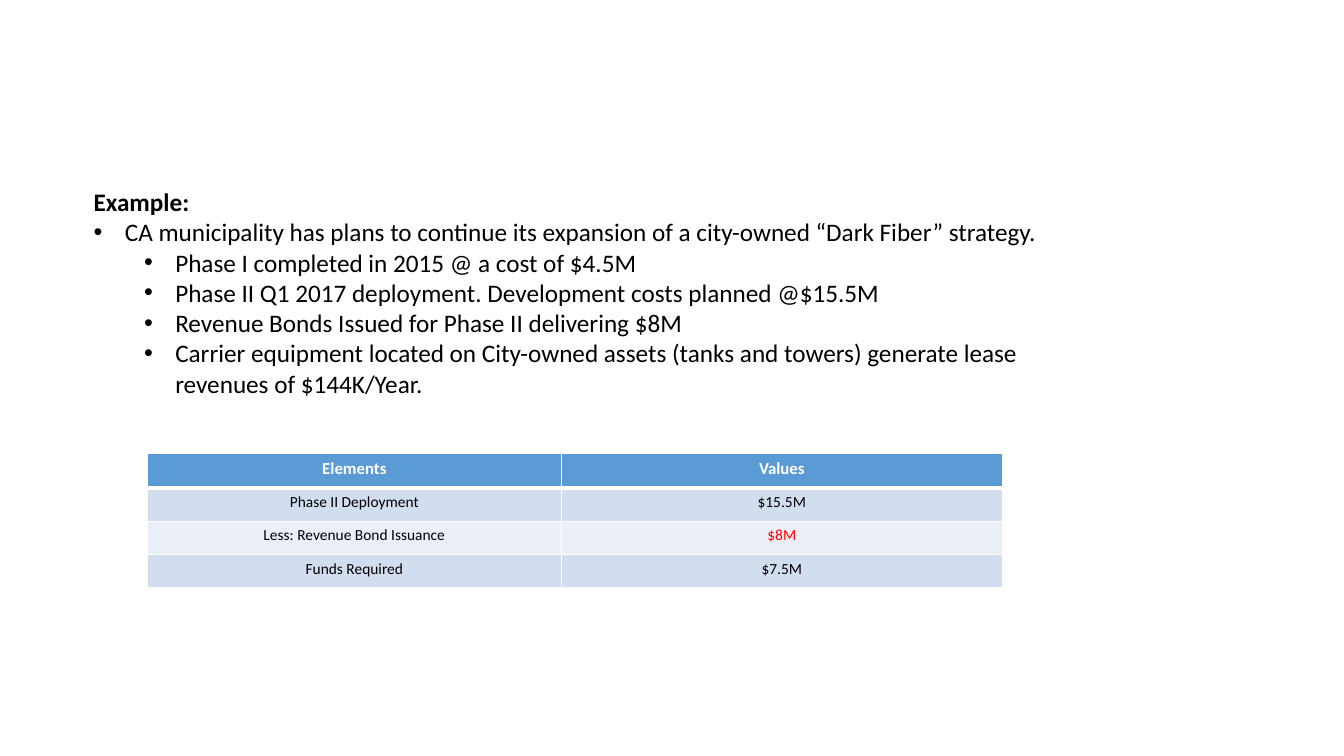
from dataclasses import dataclass

from pptx import Presentation
from pptx.dml.color import RGBColor
from pptx.enum.text import PP_ALIGN
from pptx.oxml import parse_xml
from pptx.oxml.ns import nsdecls
from pptx.util import Inches, Pt

# Content
HEADING = "Example:"
POINTS = [  # (level, text)
    (0, "CA municipality has plans to continue its expansion of a city-owned “Dark Fiber” strategy."),
    (1, "Phase I completed in 2015 @ a cost of $4.5M"),
    (1, "Phase II Q1 2017 deployment. Development costs planned @$15.5M"),
    (1, "Revenue Bonds Issued for Phase II delivering $8M"),
    (1, "Carrier equipment located on City-owned assets (tanks and towers) generate lease revenues of $144K/Year."),
]
FUNDING = [
    ("Elements", "Values"),
    ("Phase II Deployment", "$15.5M"),
    ("Less: Revenue Bond Issuance", "$8M"),
    ("Funds Required", "$7.5M"),
]
DEDUCTION = "$8M"


@dataclass(frozen=True)
class Theme:
    font: str = "Calibri"
    text: str = "000000"
    white: str = "FFFFFF"
    deduction: str = "FF0000"
    header: str = "5B9BD5"
    bands: tuple = ("D2DEEF", "EAEFF7")
    body_size: int = 18
    header_size: int = 12
    cell_size: int = 11


THEME = Theme()

# Layout
COLUMN_WIDTHS = (4.11, 4.37)
HEADER_HEIGHT, ROW_HEIGHT = 0.34, 0.33
HANGING, LEVEL_STEP = 0.31, 0.5


def style(paragraph, size, color, bold=False):
    font = paragraph.font
    font.name, font.size, font.bold = THEME.font, Pt(size), bold
    font.color.rgb = RGBColor.from_string(color)


def add_bullet(paragraph, level):
    paragraph.level = level
    properties = paragraph._p.get_or_add_pPr()
    properties.set("marL", str(Inches(HANGING + LEVEL_STEP * level)))
    properties.set("indent", str(-Inches(HANGING)))
    properties.append(parse_xml(f'<a:buFont {nsdecls("a")} typeface="Arial"/>'))
    properties.append(parse_xml(f'<a:buChar {nsdecls("a")} char="•"/>'))


def add_borders(cell, row):
    # The rule between the header and the first row is thicker
    widths = {"L": 1, "R": 1, "T": 3 if row == 1 else 1, "B": 3 if row == 0 else 1}
    for side, width in widths.items():
        cell._tc.get_or_add_tcPr().append(parse_xml(
            f'<a:ln{side} {nsdecls("a")} w="{Pt(width)}"><a:solidFill>'
            f'<a:srgbClr val="{THEME.white}"/></a:solidFill></a:ln{side}>'))


def add_example(slide):
    box = slide.shapes.add_textbox(Inches(0.83), Inches(1.8), Inches(9.75), Inches(2.2))
    frame = box.text_frame
    frame.word_wrap = True
    heading = frame.paragraphs[0]
    heading.text = HEADING
    style(heading, THEME.body_size, THEME.text, bold=True)
    for level, text in POINTS:
        point = frame.add_paragraph()
        point.text = text
        add_bullet(point, level)
        style(point, THEME.body_size, THEME.text)


def add_funding(slide):
    height = HEADER_HEIGHT + ROW_HEIGHT * (len(FUNDING) - 1)
    table = slide.shapes.add_table(
        len(FUNDING), len(COLUMN_WIDTHS), Inches(1.46), Inches(4.5),
        Inches(sum(COLUMN_WIDTHS)), Inches(height)).table
    for column, width in zip(table.columns, COLUMN_WIDTHS):
        column.width = Inches(width)
    for row, values in enumerate(FUNDING):
        is_header = row == 0
        table.rows[row].height = Inches(HEADER_HEIGHT if is_header else ROW_HEIGHT)
        fill = THEME.header if is_header else THEME.bands[(row - 1) % 2]
        for column, value in enumerate(values):
            cell = table.cell(row, column)
            add_borders(cell, row)
            cell.fill.solid()
            cell.fill.fore_color.rgb = RGBColor.from_string(fill)
            cell.text = value
            entry = cell.text_frame.paragraphs[0]
            entry.alignment = PP_ALIGN.CENTER
            if is_header:
                style(entry, THEME.header_size, THEME.white, bold=True)
            else:
                color = THEME.deduction if value == DEDUCTION else THEME.text
                style(entry, THEME.cell_size, color)


def main():
    deck = Presentation()
    deck.slide_width, deck.slide_height = Inches(13.33), Inches(7.5)
    slide = deck.slides.add_slide(deck.slide_layouts[6])  # blank: no title shows
    add_example(slide)
    add_funding(slide)
    deck.save("out.pptx")


if __name__ == "__main__":
    main()
